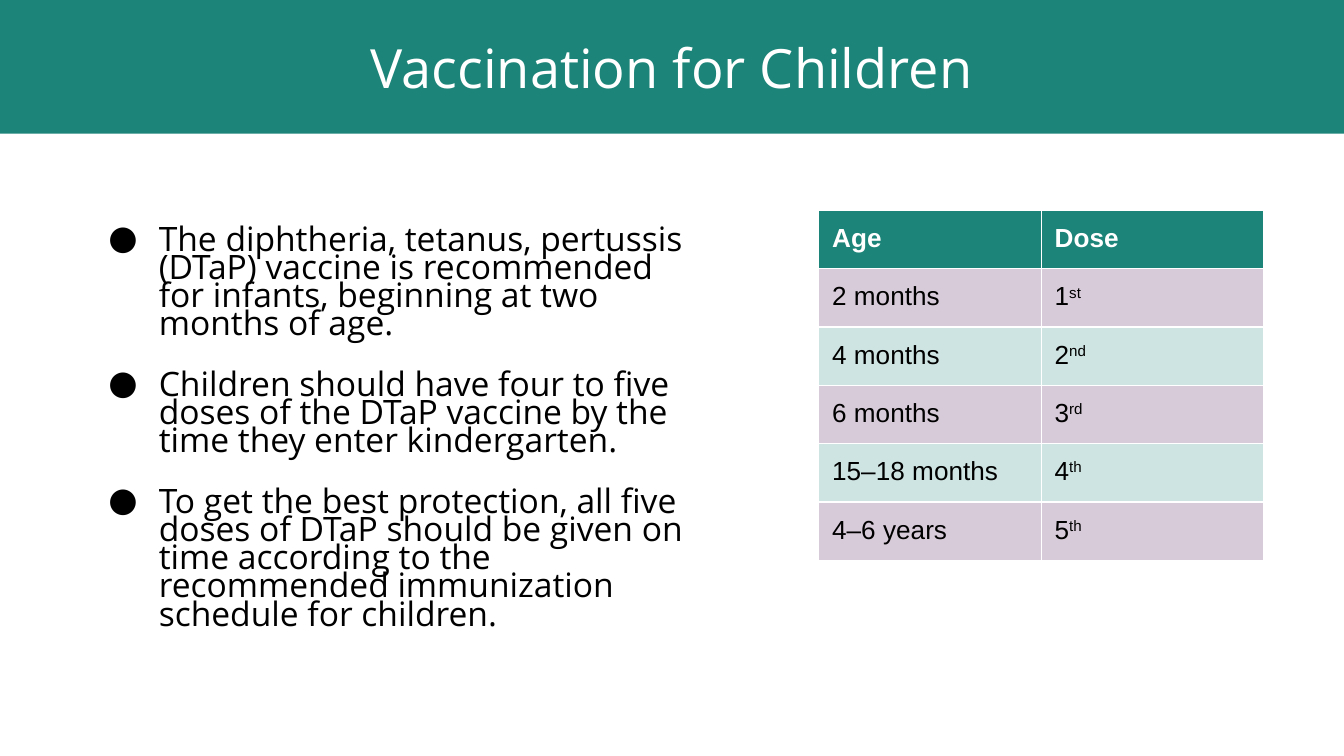
import pptx
import pptx.dml.color
import pptx.enum.shapes
import pptx.enum.text
import pptx.oxml.ns
import pptx.util
from lxml import etree

Pt = pptx.util.Pt
qn = pptx.oxml.ns.qn

TEAL, PALE_TEAL, MAUVE = "1C8478", "CEE4E2", "D8CBD9"
WHITE, BLACK = "FFFFFF", "000000"
INSET = Pt(7.2)

ADVICE = [
    "The diphtheria, tetanus, pertussis (DTaP) vaccine is recommended "
    "for infants, beginning at two months of age.",
    "Children should have four to five doses of the DTaP vaccine by the "
    "time they enter kindergarten.",
    "To get the best protection, all five doses of DTaP should be given on "
    "time according to the recommended immunization schedule for children.",
]
# Age, dose number, ordinal suffix
SCHEDULE = [
    ("Age", "Dose", ""),
    ("2 months", "1", "st"),
    ("4 months", "2", "nd"),
    ("6 months", "3", "rd"),
    ("15–18 months", "4", "th"),
    ("4–6 years", "5", "th"),
]


def rgb(value):
    return pptx.dml.color.RGBColor.from_string(value)


def set_fill(part, color):
    part.fill.solid()
    part.fill.fore_color.rgb = rgb(color)


def set_font(paragraph, name, size, color, bold=False):
    font = paragraph.font
    font.name, font.size, font.bold = name, Pt(size), bold
    font.color.rgb = rgb(color)


def add_band(slide, left, top, width, height):
    band = slide.shapes.add_shape(
        pptx.enum.shapes.MSO_SHAPE.RECTANGLE,
        Pt(left), Pt(top), Pt(width), Pt(height))
    set_fill(band, TEAL)
    band.line.fill.background()
    band.shadow.inherit = False


def add_text(slide, left, top, width, height):
    box = slide.shapes.add_textbox(Pt(left), Pt(top), Pt(width), Pt(height))
    frame = box.text_frame
    frame.word_wrap = True
    frame.vertical_anchor = pptx.enum.text.MSO_ANCHOR.MIDDLE
    frame.margin_left = frame.margin_right = INSET
    frame.margin_top = frame.margin_bottom = INSET
    return frame


def add_bullet(paragraph):
    properties = paragraph._p.get_or_add_pPr()
    properties.set("marL", str(Pt(36)))
    properties.set("indent", str(Pt(-27)))
    color = etree.SubElement(properties, qn("a:buClr"))
    etree.SubElement(color, qn("a:srgbClr"), val=BLACK)
    etree.SubElement(properties, qn("a:buFont"), typeface="Open Sans")
    etree.SubElement(properties, qn("a:buChar"), char="●")


def add_advice(slide):
    frame = add_text(slide, 42, 95, 332, 271)
    for index, advice in enumerate(ADVICE):
        paragraph = frame.add_paragraph() if index else frame.paragraphs[0]
        paragraph.text = advice
        paragraph.line_spacing = 0.7
        paragraph.space_before = Pt(17.3 if index else 0)
        set_font(paragraph, "Open Sans", 18, BLACK)
        add_bullet(paragraph)


def set_borders(cell):
    properties = cell._tc.get_or_add_tcPr()
    for index, side in enumerate(("lnL", "lnR", "lnT", "lnB")):
        line = etree.Element(qn(f"a:{side}"), w=str(Pt(0.75)))
        fill = etree.SubElement(line, qn("a:solidFill"))
        etree.SubElement(fill, qn("a:srgbClr"), val=WHITE)
        properties.insert(index, line)


def fill_cell(cell, text, suffix, fill, color, bold):
    cell.margin_left = cell.margin_right = INSET
    cell.margin_top = cell.margin_bottom = INSET
    set_fill(cell, fill)
    set_borders(cell)
    paragraph = cell.text_frame.paragraphs[0]
    paragraph.add_run().text = text
    if suffix:
        ordinal = paragraph.add_run()
        ordinal.text = suffix
        ordinal.font._element.set("baseline", "30000")
    set_font(paragraph, "Arial", 14, color, bold)


def add_schedule(slide, left, top, column_width, row_height):
    table = slide.shapes.add_table(
        len(SCHEDULE), 2, Pt(left), Pt(top),
        Pt(2 * column_width), Pt(len(SCHEDULE) * row_height)).table
    for index, (age, dose, suffix) in enumerate(SCHEDULE):
        header = index == 0
        fill = TEAL if header else (PALE_TEAL, MAUVE)[index % 2]
        color = WHITE if header else BLACK
        fill_cell(table.cell(index, 0), age, "", fill, color, header)
        fill_cell(table.cell(index, 1), dose, suffix, fill, color, header)


def main():
    deck = pptx.Presentation()
    deck.slide_width, deck.slide_height = Pt(720), Pt(405)
    slide = deck.slides.add_slide(deck.slide_layouts[6])

    # Title band
    add_band(slide, -1, 0, 722, 71.6)
    title = add_text(slide, 124, 12.5, 472, 47).paragraphs[0]
    title.text = "Vaccination for Children"
    title.alignment = pptx.enum.text.PP_ALIGN.CENTER
    set_font(title, "Open Sans", 29, WHITE)

    # Recommendations and dose schedule
    add_advice(slide)
    add_schedule(slide, 438.6, 112.7, 119.2, 30)

    deck.save("out.pptx")


if __name__ == "__main__":
    main()
